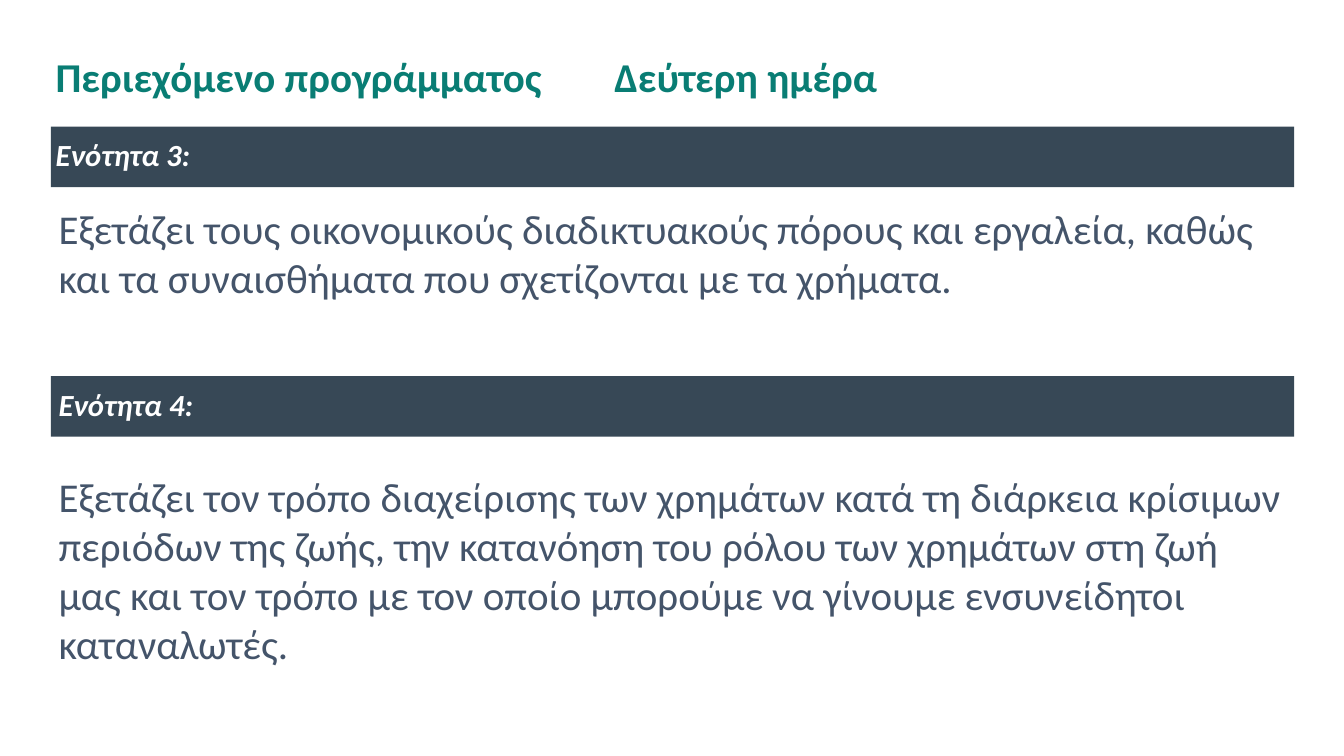
from pptx import Presentation
from pptx.dml.color import RGBColor
from pptx.enum.shapes import MSO_SHAPE
from pptx.enum.text import MSO_ANCHOR, PP_ALIGN
from pptx.oxml.ns import qn
from pptx.util import Pt
from lxml.etree import SubElement

# Content
TITLE = "Περιεχόμενο προγράμματος\tΔεύτερη ημέρα"
# Each unit: label, label inset, bar top, body top, body height, body text
UNITS = [
    ("Ενότητα 3:", 5, 132, 207, 164,
     "Εξετάζει τους οικονομικούς διαδικτυακούς πόρους και εργαλεία, καθώς "
     "και τα συναισθήματα που σχετίζονται με τα χρήματα."),
    ("Ενότητα 4:", 8, 392, 486, 217,
     "Εξετάζει τον τρόπο διαχείρισης των χρημάτων κατά τη διάρκεια κρίσιμων "
     "περιόδων της ζωής, την κατανόηση του ρόλου των χρημάτων στη ζωή μας "
     "και τον τρόπο με τον οποίο μπορούμε να γίνουμε ενσυνείδητοι καταναλωτές."),
]
COLORS = {"title": "097D74", "bar": "374856", "label": "FFFFFF", "body": "44546A"}
FONT = "Calibri"

# Layout in px, 96 to the inch
EMU_PER_PX = 9525
SLIDE_WIDTH, SLIDE_HEIGHT = 1400, 788
LEFT, WIDTH = 53, 1295
BODY_LEFT, BODY_WIDTH = 56, 1289
TITLE_TOP, TITLE_HEIGHT, TITLE_TAB = 45, 76, 582
BAR_HEIGHT = 63
INSET = 5


def px(value):
    return value * EMU_PER_PX


def write(shape, text, size, color, anchor=MSO_ANCHOR.TOP, inset=INSET,
          spacing=None, align=PP_ALIGN.LEFT, bold=False, italic=False):
    frame = shape.text_frame
    frame.word_wrap = True
    frame.vertical_anchor = anchor
    frame.margin_left = px(inset)
    frame.margin_right = frame.margin_top = frame.margin_bottom = px(INSET)
    frame.text = text
    para = frame.paragraphs[0]
    para.alignment = align
    if spacing:
        para.line_spacing = spacing
    for span in para.runs:
        font = span.font
        font.name, font.size = FONT, Pt(size)
        font.bold, font.italic = bold, italic
        font.color.rgb = RGBColor.from_string(COLORS[color])
    return para


deck = Presentation()
deck.slide_width, deck.slide_height = px(SLIDE_WIDTH), px(SLIDE_HEIGHT)
page = deck.slides.add_slide(deck.slide_layouts[6])

# Title, with a tab stop before the day
title = page.shapes.add_textbox(px(LEFT), px(TITLE_TOP), px(WIDTH), px(TITLE_HEIGHT))
para = write(title, TITLE, 32, "title", MSO_ANCHOR.MIDDLE, spacing=0.9, bold=True)
tabs = SubElement(para._p.get_or_add_pPr(), qn("a:tabLst"))
SubElement(tabs, qn("a:tab"), pos=str(px(TITLE_TAB)), algn="l")

# Units: label bar and description
for label, label_inset, bar_top, body_top, body_height, text in UNITS:
    bar = page.shapes.add_shape(
        MSO_SHAPE.RECTANGLE, px(LEFT), px(bar_top), px(WIDTH), px(BAR_HEIGHT))
    bar.shadow.inherit = False
    bar.fill.solid()
    bar.fill.fore_color.rgb = RGBColor.from_string(COLORS["bar"])
    bar.line.fill.background()
    write(bar, label, 24, "label", MSO_ANCHOR.MIDDLE, label_inset, 0.9,
          PP_ALIGN.JUSTIFY, bold=True, italic=True)

    body = page.shapes.add_textbox(
        px(BODY_LEFT), px(body_top), px(BODY_WIDTH), px(body_height))
    write(body, text, 32, "body")

deck.save("out.pptx")
